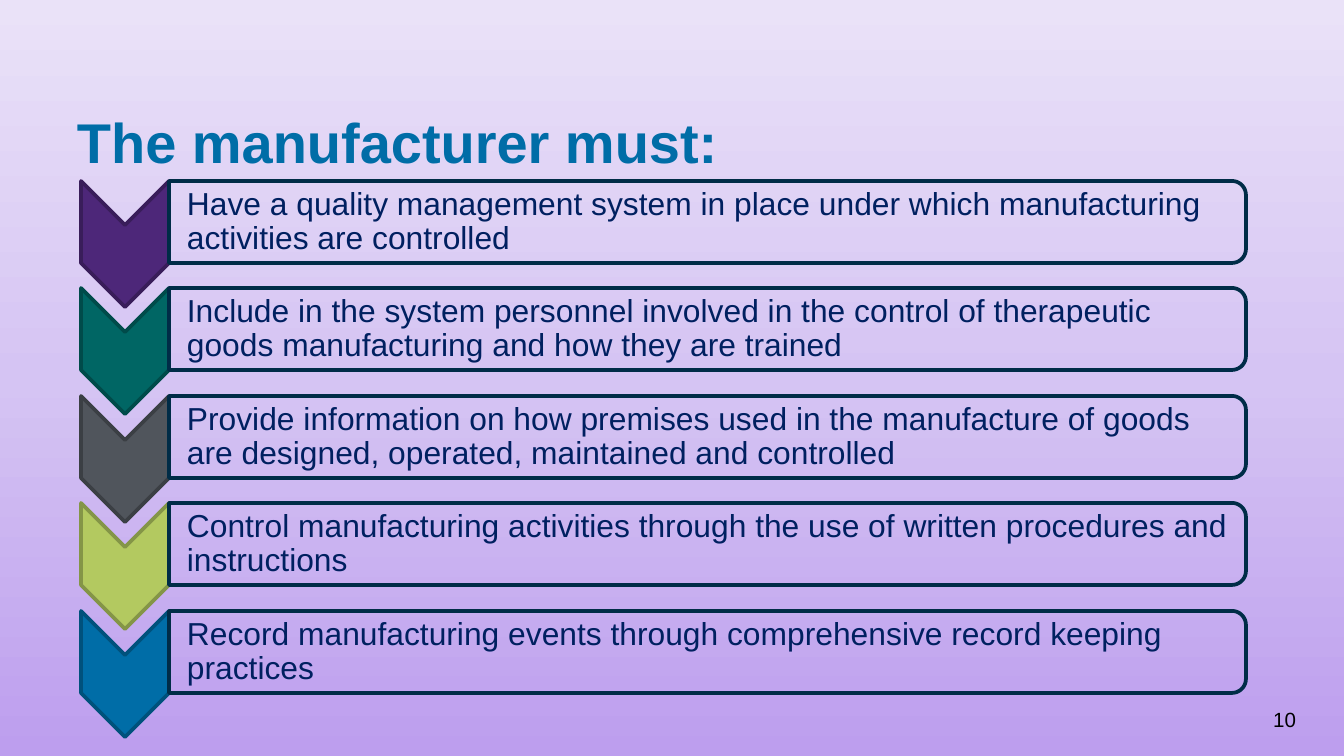
"""Build the slide listing what the manufacturer must do."""
import copy
import dataclasses
import math

import pptx
import pptx.dml.color
import pptx.enum.text
import pptx.oxml.ns
import pptx.util

EMU_PER_PX = 914400 / 134.4
COLOURS = {
    "title": "006DA7", "text": "002060", "number": "000000", "frame": "002C47",
    "purple": "4D2779", "purple_edge": "391D5A",
    "green": "006664", "green_edge": "004B4A",
    "grey": "50555C", "grey_edge": "3B3F44",
    "lime": "B3C960", "lime_edge": "849547",
    "blue": "006DA7", "blue_edge": "00517C",
    "back_bottom": "BD9EEE", "back_middle": "D5C4F3", "back_top": "EAE2F8",
}
LEFT, MIDDLE, SPLIT, RIGHT = 81, 125, 169, 1246
FIRST_TOP, TWO_ROWS = 181, 215
ROW_HEIGHT, POINT_DEPTH, RADIUS = 82, 44, 14
ANCHOR = pptx.enum.text.MSO_ANCHOR
ALIGN = pptx.enum.text.PP_ALIGN


@dataclasses.dataclass
class Duty:
    colour: str
    text: str


@dataclasses.dataclass
class Label:
    text: str
    bounds: tuple[int, int, int, int]
    colour: str
    font: dict
    paragraph: dict


DUTIES = [
    Duty("purple", "Have a quality management system in place under which "
         "manufacturing activities are controlled"),
    Duty("green", "Include in the system personnel involved in the control of "
         "therapeutic goods manufacturing and how they are trained"),
    Duty("grey", "Provide information on how premises used in the manufacture of "
         "goods are designed, operated, maintained and controlled"),
    Duty("lime", "Control manufacturing activities through the use of written "
         "procedures and instructions"),
    Duty("blue", "Record manufacturing events through comprehensive record "
         "keeping practices"),
]
LABELS = [
    Label("The manufacturer must:", (77, 108, 1218, 74), "title",
          {"size": pptx.util.Pt(30), "bold": True}, {"alignment": ALIGN.LEFT}),
    Label("10", (968, 707, 328, 40), "number",
          {"size": pptx.util.Pt(11)}, {"alignment": ALIGN.RIGHT}),
]


def px(length: float) -> pptx.util.Emu:
    """Turn pixels into EMU."""
    return pptx.util.Emu(round(length * EMU_PER_PX))


def rgb(name: str) -> pptx.dml.color.RGBColor:
    """Look up a named colour."""
    return pptx.dml.color.RGBColor.from_string(COLOURS[name])


def apply(target: object, values: dict) -> None:
    """Set each attribute named in values."""
    for name, value in values.items():
        setattr(target, name, value)


def write(shape, text: str, colour: str, font: dict, paragraph: dict,
          insets: tuple[int, int, int, int], anchor) -> None:
    """Fill a shape with one formatted paragraph."""
    frame = shape.text_frame
    sides = ("margin_left", "margin_top", "margin_right", "margin_bottom")
    apply(frame, {"word_wrap": True, "vertical_anchor": anchor}
          | dict(zip(sides, map(px, insets))))
    para = frame.paragraphs[0]
    apply(para, paragraph)
    span = para.add_run()
    span.text = text
    apply(span.font, {"name": "Arial"} | font)
    span.font.color.rgb = rgb(colour)


def draw_outline(page, points: list[tuple[float, float]], edge: str):
    """Draw a closed outline through points given in pixels."""
    first, *rest = [(px(x), px(y)) for x, y in points]
    builder = page.shapes.build_freeform(*first)
    builder.add_line_segments(rest, close=True)
    shape = builder.convert_to_shape()
    shape.shadow.inherit = False
    shape.line.color.rgb = rgb(edge)
    shape.line.width = pptx.util.Pt(2)
    return shape


def arc(x: float, y: float, start: int) -> list[tuple[float, float]]:
    """Give the points of a clockwise quarter circle."""
    angles = [math.radians(start + step) for step in range(0, 91, 10)]
    return [(x + RADIUS * math.cos(a), y + RADIUS * math.sin(a)) for a in angles]


def draw_duty(page, duty: Duty, top: int) -> None:
    """Draw one chevron and its text panel."""
    bottom = top + ROW_HEIGHT
    chevron = draw_outline(page, [
        (SPLIT, top), (SPLIT, bottom), (MIDDLE, bottom + POINT_DEPTH),
        (LEFT, bottom), (LEFT, top), (MIDDLE, top + POINT_DEPTH),
    ], f"{duty.colour}_edge")
    chevron.fill.solid()
    chevron.fill.fore_color.rgb = rgb(duty.colour)
    corner = RIGHT - RADIUS
    panel = draw_outline(page, [
        (SPLIT, top), *arc(corner, top + RADIUS, -90),
        *arc(corner, bottom - RADIUS, 0), (SPLIT, bottom),
    ], "frame")
    panel.fill.background()
    write(panel, duty.text, "text", {"size": pptx.util.Pt(17)},
          {"alignment": ALIGN.LEFT, "line_spacing": 0.9}, (18, 5, 5, 5),
          ANCHOR.MIDDLE)


def draw_label(page, label: Label) -> None:
    """Draw one free-standing line of text."""
    box = page.shapes.add_textbox(*map(px, label.bounds))
    write(box, label.text, label.colour, label.font, label.paragraph,
          (0, 0, 0, 0), ANCHOR.TOP)


def paint_background(page) -> None:
    """Give the page a gradient that lightens upwards."""
    fill = page.background.fill
    fill.gradient()
    fill.gradient_angle = 90
    first = next(page.element.iter(pptx.oxml.ns.qn("a:gs")))
    first.addnext(copy.deepcopy(first))
    names = ("back_bottom", "back_middle", "back_top")
    for index, (stop, name) in enumerate(zip(fill.gradient_stops, names)):
        stop.position = index / 2
        stop.color.rgb = rgb(name)


def main() -> None:
    """Build and save the deck."""
    deck = pptx.Presentation()
    apply(deck, {"slide_width": px(1344), "slide_height": px(756)})
    page = deck.slides.add_slide(deck.slide_layouts[6])
    paint_background(page)
    for label in LABELS:
        draw_label(page, label)
    for index, duty in enumerate(DUTIES):
        draw_duty(page, duty, FIRST_TOP + index * TWO_ROWS // 2)
    deck.save("out.pptx")


if __name__ == "__main__":
    main()
